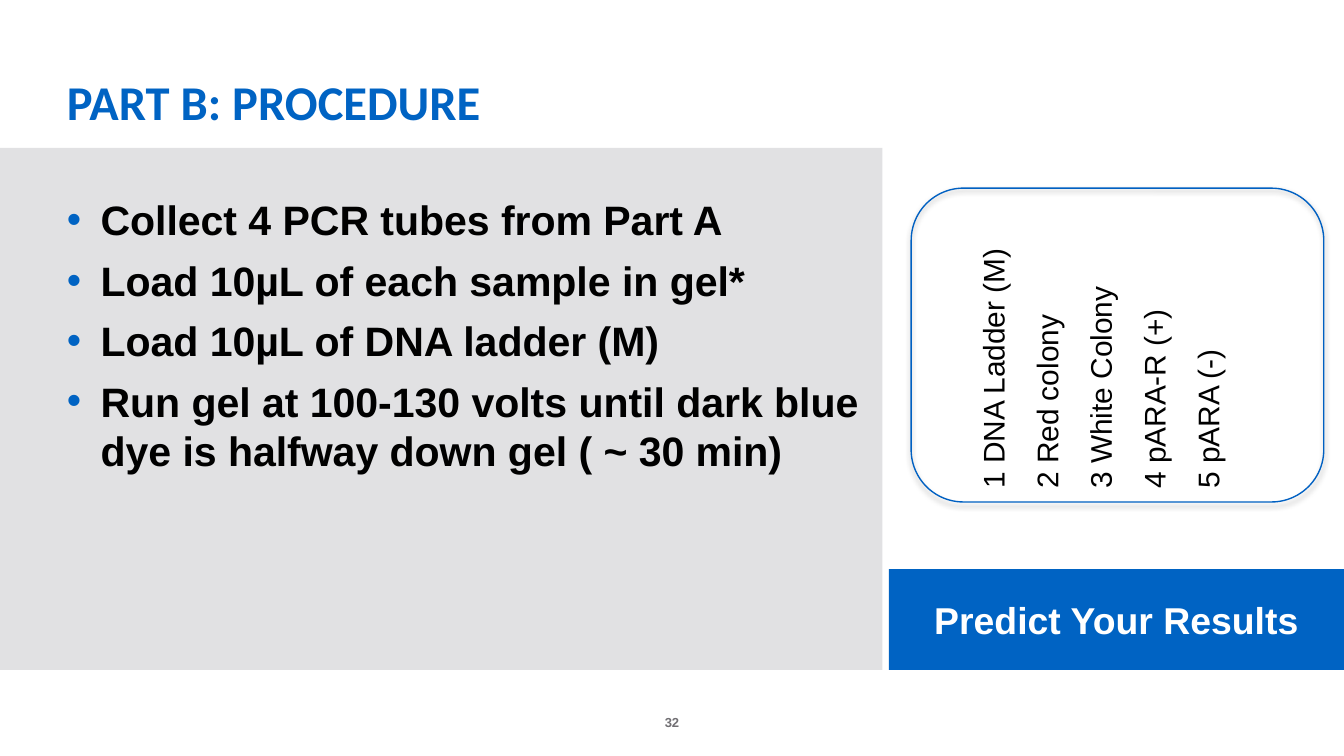
import pptx
import pptx.dml.color
import pptx.enum.shapes
import pptx.enum.text
import pptx.oxml
import pptx.oxml.ns
import pptx.util

RGB = pptx.dml.color.RGBColor
BLUE = RGB(0x00, 0x63, 0xC3)
EDGE = RGB(0x00, 0x60, 0xC2)
GREY = RGB(0xE1, 0xE1, 0xE3)
DIM = RGB(0x71, 0x6F, 0x73)
WHITE = RGB(0xFF, 0xFF, 0xFF)
BLACK = RGB(0x00, 0x00, 0x00)
KIND = pptx.enum.shapes.MSO_SHAPE
ANCHOR = pptx.enum.text.MSO_ANCHOR
ALIGN = pptx.enum.text.PP_ALIGN
SCALE = 4572
NS = pptx.oxml.ns.nsdecls("a")

STEPS = [
    "Collect 4 PCR tubes from Part A",
    "Load 10µL of each sample in gel*",
    "Load 10µL of DNA ladder (M)",
    "Run gel at 100-130 volts until dark blue dye is halfway down gel ( ~ 30 min)",
]
LANES = ["DNA Ladder (M)", "Red colony", "White Colony", "pARA-R (+)", "pARA (-)"]


def px(*nums):
    return [pptx.util.Emu(num * SCALE) for num in nums]


def write(shape, lines, size, color, bold=True, font="Arial",
          align=ALIGN.LEFT, anchor=ANCHOR.TOP):
    frame = shape.text_frame
    frame.word_wrap = True
    frame.vertical_anchor = anchor
    frame.text = "\n".join(lines)
    for para in frame.paragraphs:
        para.alignment = align
        for run in para.runs:
            run.font.name = font
            run.font.size = pptx.util.Pt(size)
            run.font.bold = bold
            run.font.color.rgb = color
    return frame


def label(slide, box, *args, **style):
    return write(slide.shapes.add_textbox(*px(*box)), *args, **style)


def block(slide, box, color):
    shape = slide.shapes.add_shape(KIND.RECTANGLE, *px(*box))
    shape.shadow.inherit = False
    shape.fill.solid()
    shape.fill.fore_color.rgb = color
    shape.line.fill.background()
    return shape


def bullet(para):
    props = para._p.get_or_add_pPr()
    left = px(50)[0]
    props.set("marL", str(left))
    props.set("indent", str(-left))
    for xml in (
        f'<a:buClr {NS}><a:srgbClr val="{BLUE}"/></a:buClr>',
        f'<a:buFont {NS} typeface="Arial"/>',
        f'<a:buChar {NS} char="•"/>',
    ):
        props.append(pptx.oxml.parse_xml(xml))


def steps(slide, box):
    x, y, w, h = box
    block(slide, box, GREY)
    frame = label(slide, (x + 80, y + 60, w - 80, h - 83), STEPS, 22, BLACK)
    for num, para in enumerate(frame.paragraphs):
        bullet(para)
        if num:
            para.space_before = pptx.util.Pt(6)


def gel(slide, box):
    x, y, w, h = box
    card = slide.shapes.add_shape(KIND.ROUNDED_RECTANGLE, *px(*box))
    card.fill.background()
    card.line.color.rgb = EDGE
    card.line.width = pptx.util.Pt(0.75)
    card._element.spPr.append(pptx.oxml.parse_xml(
        f'<a:effectLst {NS}><a:outerShdw blurRad="39370" dist="22860" '
        'dir="5400000" rotWithShape="0"><a:srgbClr val="000000">'
        '<a:alpha val="35000"/></a:srgbClr></a:outerShdw></a:effectLst>'))
    lanes = slide.shapes.add_textbox(*px(x + 88, y - 7, 444, 504))
    lanes.rotation = 270
    lines = [f"{num} {name}" for num, name in enumerate(LANES, 1)]
    for para in write(lanes, lines, 16, BLACK, bold=False).paragraphs:
        para.line_spacing = 1.5


def banner(slide, box):
    write(block(slide, box, BLUE), ["Predict Your Results"], 20, WHITE,
          align=ALIGN.CENTER, anchor=ANCHOR.MIDDLE)


def title(slide, box):
    label(slide, box, ["PART B: PROCEDURE"], 26, BLUE,
          font="Calibri", anchor=ANCHOR.BOTTOM)


def folio(slide, box):
    frame = label(slide, box, ["32"], 7, DIM,
                  align=ALIGN.CENTER, anchor=ANCHOR.BOTTOM)
    frame.margin_left = frame.margin_right = 0
    frame.margin_top = frame.margin_bottom = 0


def main():
    deck = pptx.Presentation()
    deck.slide_width, deck.slide_height = px(2000, 1125)
    slide = deck.slides.add_slide(deck.slide_layouts[6])
    folio(slide, (909, 1027, 182, 60))
    steps(slide, (0, 220, 1313, 777))
    banner(slide, (1323, 847, 677, 150))
    title(slide, (80, 96, 1840, 108))
    gel(slide, (1356, 280, 614, 467))
    deck.save("out.pptx")


if __name__ == "__main__":
    main()
